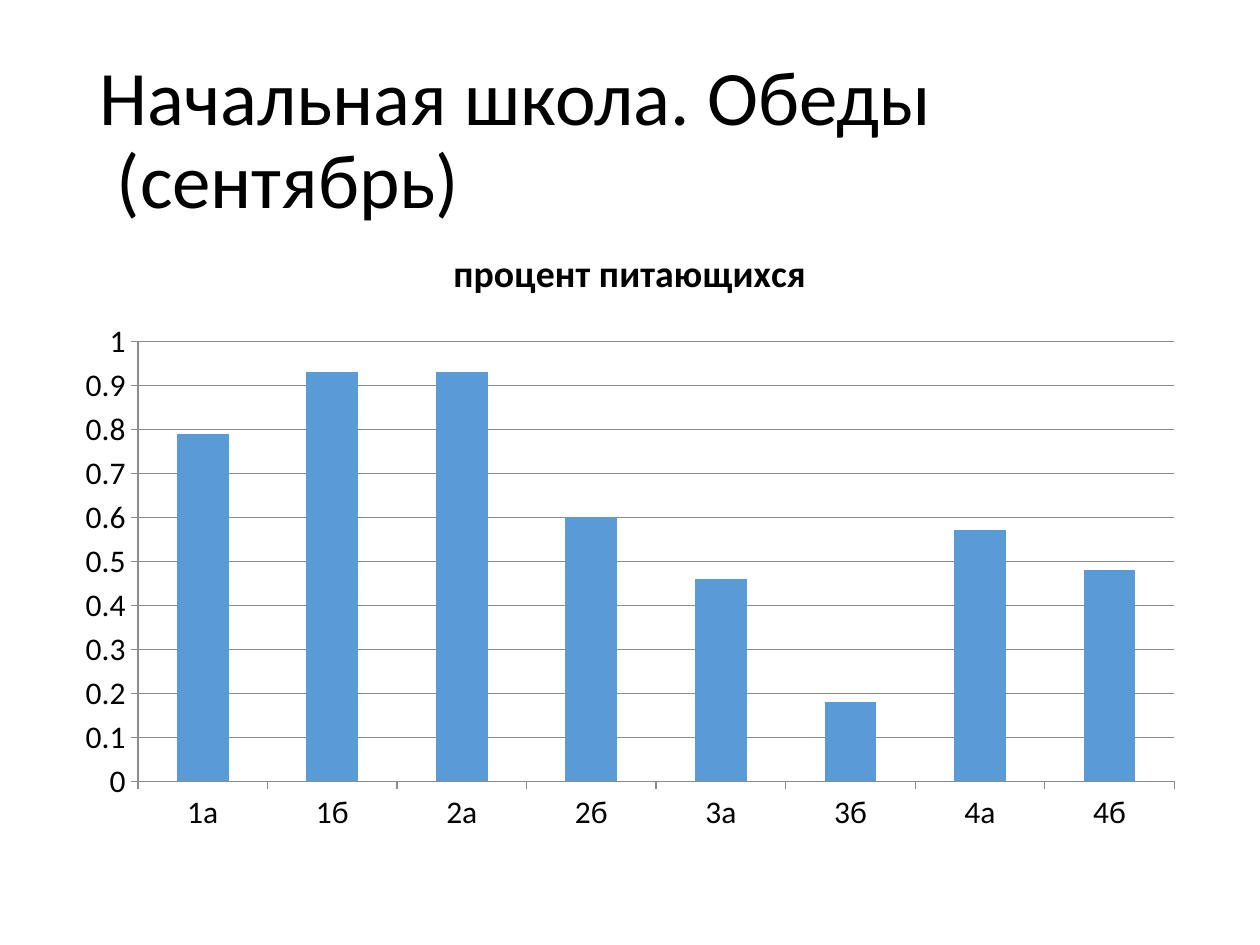
from dataclasses import dataclass

from pptx import Presentation
from pptx.chart.data import CategoryChartData
from pptx.dml.color import RGBColor
from pptx.enum.chart import XL_CHART_TYPE, XL_TICK_MARK
from pptx.enum.text import MSO_ANCHOR
from pptx.util import Inches, Pt


@dataclass(frozen=True)
class Theme:
    font: str = "Calibri"
    text: RGBColor = RGBColor(0x00, 0x00, 0x00)
    bar: RGBColor = RGBColor(0x5B, 0x9B, 0xD5)
    line: RGBColor = RGBColor(0x8B, 0x8B, 0x8B)
    title_size: float = 44
    chart_title_size: float = 21.6
    label_size: float = 18


@dataclass(frozen=True)
class Box:
    left: float
    top: float
    width: float
    height: float

    def lengths(self) -> tuple:
        return tuple(Inches(value) for value in (self.left, self.top, self.width, self.height))


@dataclass(frozen=True)
class SchoolClass:
    name: str
    share: float


THEME = Theme()
TITLE_BOX = Box(0.69, 0.4, 8.62, 1.45)
CHART_BOX = Box(0.5, 1.75, 9, 4.95)
TITLE_LINES = ("Начальная школа. Обеды", " (сентябрь)")
SERIES_NAME = "процент питающихся"
CLASSES = (
    SchoolClass("1а", 0.79),
    SchoolClass("1б", 0.93),
    SchoolClass("2а", 0.93),
    SchoolClass("2б", 0.6),
    SchoolClass("3а", 0.46),
    SchoolClass("3б", 0.18),
    SchoolClass("4а", 0.57),
    SchoolClass("4б", 0.48),
)


def style_font(font, size: float, bold: bool = False) -> None:
    font.name = THEME.font
    font.size = Pt(size)
    font.bold = bold
    font.color.rgb = THEME.text


def style_line(line) -> None:
    line.color.rgb = THEME.line
    line.width = Pt(0.75)


def add_title(slide, lines: tuple, box: Box) -> None:
    frame = slide.shapes.add_textbox(*box.lengths()).text_frame
    frame.word_wrap = True
    frame.vertical_anchor = MSO_ANCHOR.MIDDLE
    paragraph = frame.paragraphs[0]
    paragraph.line_spacing = 0.9
    for index, line in enumerate(lines):
        if index:
            paragraph.add_line_break()
        run = paragraph.add_run()
        run.text = line
        style_font(run.font, THEME.title_size)


def add_share_chart(slide, classes: tuple, box: Box) -> None:
    data = CategoryChartData()
    data.categories = [school_class.name for school_class in classes]
    data.add_series(SERIES_NAME, [school_class.share for school_class in classes])
    chart = slide.shapes.add_chart(
        XL_CHART_TYPE.COLUMN_CLUSTERED, *box.lengths(), data
    ).chart
    style_font(chart.font, THEME.label_size)
    chart.has_legend = False

    chart.has_title = True
    run = chart.chart_title.text_frame.paragraphs[0].add_run()
    run.text = SERIES_NAME
    style_font(run.font, THEME.chart_title_size, bold=True)
    chart.chart_title.include_in_layout = False

    for axis in (chart.category_axis, chart.value_axis):
        axis.major_tick_mark = XL_TICK_MARK.OUTSIDE
        axis.minor_tick_mark = XL_TICK_MARK.NONE
        style_line(axis.format.line)
    chart.value_axis.minimum_scale = 0
    chart.value_axis.maximum_scale = 1
    chart.value_axis.major_unit = 0.1
    chart.value_axis.has_major_gridlines = True
    style_line(chart.value_axis.major_gridlines.format.line)

    plot = chart.plots[0]
    plot.gap_width = 150
    plot.vary_by_categories = False
    fill = plot.series[0].format.fill
    fill.solid()
    fill.fore_color.rgb = THEME.bar


def main() -> None:
    presentation = Presentation()
    presentation.slide_width = Inches(10)
    presentation.slide_height = Inches(7.5)
    slide = presentation.slides.add_slide(presentation.slide_layouts[6])
    add_title(slide, TITLE_LINES, TITLE_BOX)
    add_share_chart(slide, CLASSES, CHART_BOX)
    presentation.save("out.pptx")


if __name__ == "__main__":
    main()
